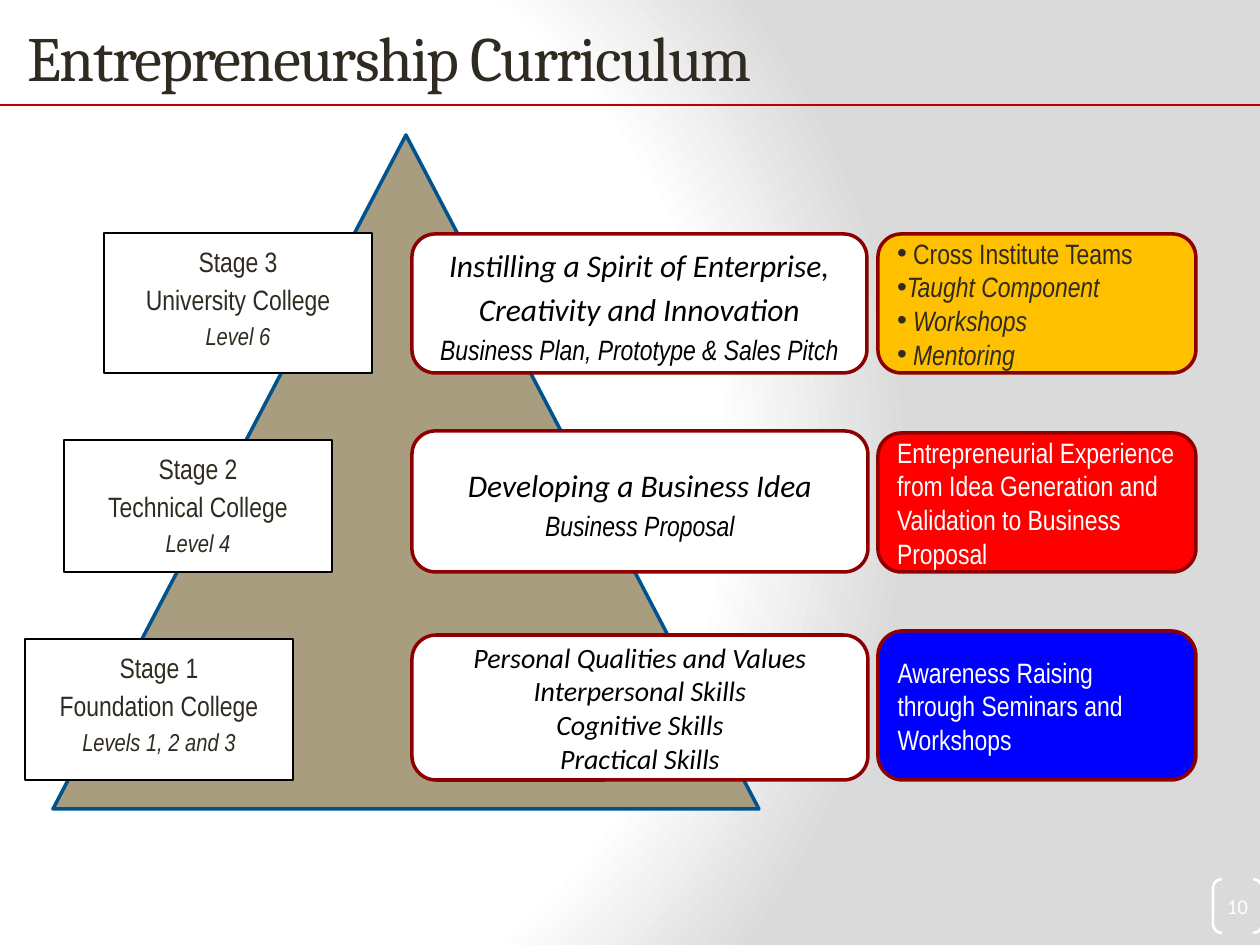
from dataclasses import dataclass

from lxml import etree
from pptx import Presentation
from pptx.dml.color import RGBColor
from pptx.enum.shapes import MSO_CONNECTOR, MSO_SHAPE
from pptx.enum.text import MSO_ANCHOR, MSO_AUTO_SIZE, PP_ALIGN
from pptx.oxml import parse_xml
from pptx.oxml.ns import nsdecls, qn
from pptx.util import Pt

EMU_PER_PX = 914400 / 126
PAGE_WIDTH, PAGE_HEIGHT = 1260, 945

RECTANGLE = MSO_SHAPE.RECTANGLE
ROUNDED = MSO_SHAPE.ROUNDED_RECTANGLE
TRIANGLE = MSO_SHAPE.ISOSCELES_TRIANGLE
BRACKETS = MSO_SHAPE.DOUBLE_BRACKET
LEFT, CENTER = PP_ALIGN.LEFT, PP_ALIGN.CENTER
TOP, MIDDLE = MSO_ANCHOR.TOP, MSO_ANCHOR.MIDDLE

INK = RGBColor(0x2F, 0x2B, 0x20)
BLACK = RGBColor(0, 0, 0)
WHITE = RGBColor(0xFF, 0xFF, 0xFF)
TAN = RGBColor(0xA8, 0x9D, 0x7F)
NAVY = RGBColor(0x00, 0x53, 0x8E)
RULE_RED = RGBColor(0xBC, 0, 0)
MAROON = RGBColor(0x8E, 0, 0)
AMBER = RGBColor(0xFF, 0xC0, 0)
RED = RGBColor(0xFF, 0, 0)
BLUE = RGBColor(0, 0, 0xFF)

NARROW, BODY, HEADING = "Arial Narrow", "Calibri", "Cambria"

BACKGROUND = f"""<p:bg {nsdecls("p", "a")}><p:bgPr><a:gradFill rotWithShape="1"><a:gsLst>
<a:gs pos="0"><a:srgbClr val="FFFFFF"/></a:gs>
<a:gs pos="75000"><a:srgbClr val="FFFFFF"/></a:gs>
<a:gs pos="100000"><a:srgbClr val="DADADA"/></a:gs></a:gsLst>
<a:path path="circle"><a:fillToRect l="20000" t="50000" r="100000" b="50000"/></a:path>
</a:gradFill><a:effectLst/></p:bgPr></p:bg>"""


@dataclass(frozen=True)
class Line:
    text: str
    font: str = NARROW
    size: int = 16
    italic: bool = False
    bullet: bool = False


@dataclass(frozen=True)
class Stage:
    left: int
    top: int
    height: int
    lines: tuple[Line, ...]


@dataclass(frozen=True)
class Focus:
    top: int
    width: int
    height: int
    lines: tuple[Line, ...]
    spacing: float = 1.15


@dataclass(frozen=True)
class Support:
    top: int
    height: int
    fill: RGBColor
    color: RGBColor
    lines: tuple[Line, ...]


def stage_lines(name: str, college: str, level: str) -> tuple[Line, ...]:
    return Line(name), Line(college), Line(level, size=14, italic=True)


STAGES = (
    Stage(104, 233, 140, stage_lines("Stage 3", "University College", "Level 6")),
    Stage(64, 440, 132, stage_lines("Stage 2", "Technical College", "Level 4")),
    Stage(25, 639, 141, stage_lines("Stage 1", "Foundation College", "Levels 1, 2 and 3")),
)
SKILLS = ("Personal Qualities and Values", "Interpersonal Skills",
          "Cognitive Skills", "Practical Skills")
FOCUSES = (
    Focus(234, 455, 139, (
        Line("Instilling a Spirit of Enterprise, Creativity and Innovation", BODY, 18, True),
        Line("Business Plan, Prototype & Sales Pitch", italic=True))),
    Focus(431, 456, 141, (
        Line("Developing a Business Idea", BODY, 18, True),
        Line("Business Proposal", italic=True))),
    Focus(635, 456, 145, tuple(Line(skill, BODY, italic=True) for skill in SKILLS), 1.0),
)
SUPPORTS = (
    Support(234, 139, AMBER, INK, (
        Line(" Cross Institute Teams", bullet=True),
        Line("Taught Component", italic=True, bullet=True),
        Line(" Workshops", italic=True, bullet=True),
        Line(" Mentoring", italic=True, bullet=True))),
    Support(433, 139, RED, WHITE, (
        Line("Entrepreneurial Experience from Idea Generation and "
             "Validation to Business Proposal"),)),
    Support(631, 149, BLUE, WHITE, (
        Line("Awareness Raising through Seminars and Workshops"),)),
)


def px(value: int) -> int:
    return round(value * EMU_PER_PX)


def add_box(page, kind, left: int, top: int, width: int, height: int, *,
            line: RGBColor, weight: float, fill: RGBColor | None = None):
    box = page.shapes.add_shape(kind, px(left), px(top), px(width), px(height))
    box.shadow.inherit = False
    if fill is None:
        box.fill.background()
    else:
        box.fill.solid()
        box.fill.fore_color.rgb = fill
    box.line.color.rgb = line
    box.line.width = Pt(weight)
    return box


def add_bullet(para) -> None:
    properties = para._p.get_or_add_pPr()
    properties.set("marL", "0")
    properties.set("indent", "0")
    etree.SubElement(properties, qn("a:buFont")).set("typeface", "Arial")
    etree.SubElement(properties, qn("a:buChar")).set("char", "•")


def write(box, lines: tuple[Line, ...], *, color: RGBColor, align=CENTER,
          anchor=MIDDLE, spacing: float = 1.0) -> None:
    frame = box.text_frame
    frame.word_wrap = True
    frame.vertical_anchor = anchor
    for index, line in enumerate(lines):
        para = frame.add_paragraph() if index else frame.paragraphs[0]
        para.alignment = align
        para.line_spacing = spacing
        if line.bullet:
            add_bullet(para)
        span = para.add_run()
        span.text = line.text
        span.font.name = line.font
        span.font.size = Pt(line.size)
        span.font.italic = line.italic
        span.font.color.rgb = color


def add_title(page) -> None:
    title = page.shapes.title
    title.left, title.top, title.width, title.height = map(px, (15, 6, 1099, 100))
    title.text_frame.auto_size = MSO_AUTO_SIZE.NONE
    write(title, (Line("Entrepreneurship Curriculum", HEADING, 36),), color=INK, align=LEFT)
    title.text_frame.paragraphs[0].runs[0].font._element.set("spc", "-100")


def add_rule(page) -> None:
    rule = page.shapes.add_connector(
        MSO_CONNECTOR.STRAIGHT, 0, px(105), px(PAGE_WIDTH), px(105))
    rule.line.color.rgb = RULE_RED
    rule.line.width = Pt(1)
    etree.SubElement(rule._element.spPr, qn("a:effectLst"))


def add_page_number(page) -> None:
    box = add_box(page, BRACKETS, 1213, 879, 49, 54, line=WHITE, weight=1.5)
    box.adjustments[0] = 0.18
    frame = box.text_frame
    frame.margin_left = frame.margin_top = frame.margin_right = frame.margin_bottom = 0
    write(box, (Line("10", BODY, 12),), color=WHITE)


def main() -> None:
    deck = Presentation()
    deck.slide_width, deck.slide_height = px(PAGE_WIDTH), px(PAGE_HEIGHT)
    page = deck.slides.add_slide(deck.slide_layouts[5])
    page._element.cSld.insert(0, parse_xml(BACKGROUND))

    add_title(page)
    add_box(page, TRIANGLE, 53, 135, 706, 674, line=NAVY, weight=2, fill=TAN)
    add_page_number(page)
    add_rule(page)
    for stage in STAGES:
        box = add_box(page, RECTANGLE, stage.left, stage.top, 268, stage.height,
                      line=BLACK, weight=0.75, fill=WHITE)
        write(box, stage.lines, color=INK, anchor=TOP, spacing=1.15)
    for focus in FOCUSES:
        box = add_box(page, ROUNDED, 412, focus.top, focus.width, focus.height,
                      line=MAROON, weight=2, fill=WHITE)
        write(box, focus.lines, color=BLACK, spacing=focus.spacing)
    for support in SUPPORTS:
        box = add_box(page, ROUNDED, 878, support.top, 318, support.height,
                      line=MAROON, weight=2, fill=support.fill)
        write(box, support.lines, color=support.color, align=LEFT)

    deck.save("out.pptx")


if __name__ == "__main__":
    main()
